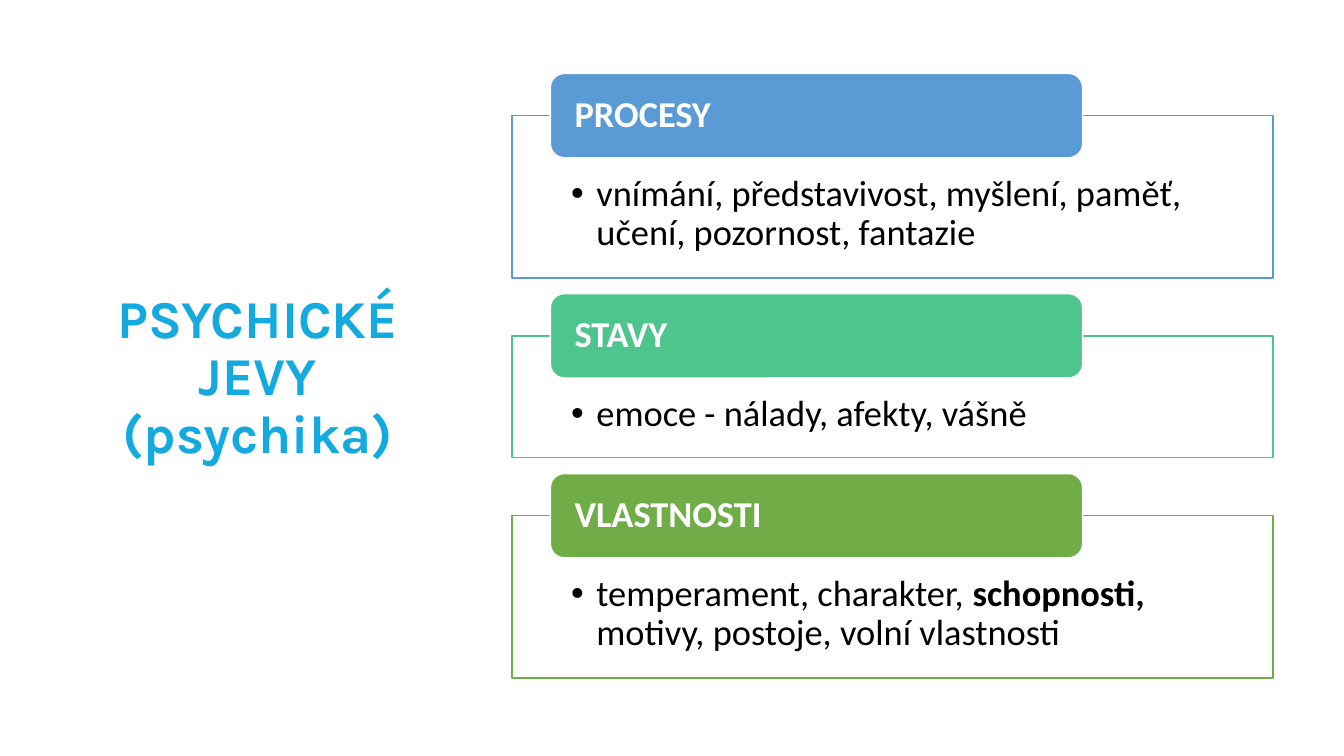
from lxml import etree
from pptx import Presentation
from pptx import util as u
from pptx.dml.color import RGBColor
from pptx.enum import shapes, text
from pptx.oxml import ns

WHITE = RGBColor(0xFF, 0xFF, 0xFF)
BLACK = RGBColor(0x00, 0x00, 0x00)
CYAN = RGBColor(0x14, 0xAA, 0xE0)
BLUE = RGBColor(0x5B, 0x9B, 0xD5)
MINT = RGBColor(0x4D, 0xC5, 0x8D)
GREEN = RGBColor(0x70, 0xAD, 0x47)

SECTIONS = [
    ("PROCESY", BLUE, 115.9,
     [("vnímání, představivost, myšlení, paměť, učení, pozornost, fantazie", False)]),
    ("STAVY", MINT, 87.1,
     [("emoce - nálady, afekty, vášně", False)]),
    ("VLASTNOSTI", GREEN, 115.9,
     [("temperament, charakter, ", False),
      ("schopnosti, ", True),
      ("motivy, postoje, volní vlastnosti", False)]),
]


class SlideBuilder:
    title_font = "Karla"
    body_font = "Calibri"
    body_size = 26
    line_spacing = 0.9

    def __init__(self, presentation):
        self.slide = presentation.slides.add_slide(presentation.slide_layouts[5])

    def format_run(self, run, font, size, color, bold):
        run.font.name = font
        run.font.size = u.Pt(size)
        run.font.color.rgb = color
        run.font.bold = bold

    def title(self, wording, left, top, width, height):
        shape = self.slide.shapes.title
        shape.left, shape.top = u.Pt(left), u.Pt(top)
        shape.width, shape.height = u.Pt(width), u.Pt(height)
        frame = shape.text_frame
        frame.text = wording
        frame.word_wrap = True
        frame.auto_size = text.MSO_AUTO_SIZE.NONE
        frame.vertical_anchor = text.MSO_ANCHOR.MIDDLE
        paragraph = frame.paragraphs[0]
        paragraph.alignment = text.PP_ALIGN.CENTER
        paragraph.line_spacing = self.line_spacing
        self.format_run(paragraph.runs[0], self.title_font, 38, CYAN, True)

    def box(self, kind, left, top, width, height, fill, line, margins, anchor):
        shape = self.slide.shapes.add_shape(
            kind, u.Pt(left), u.Pt(top), u.Pt(width), u.Pt(height))
        shape.shadow.inherit = False
        shape.fill.solid()
        shape.fill.fore_color.rgb = fill
        shape.line.color.rgb = line
        shape.line.width = u.Pt(1)
        frame = shape.text_frame
        frame.word_wrap = True
        frame.vertical_anchor = anchor
        side, above, below = margins
        frame.margin_left = frame.margin_right = u.Pt(side)
        frame.margin_top, frame.margin_bottom = u.Pt(above), u.Pt(below)
        paragraph = frame.paragraphs[0]
        paragraph.alignment = text.PP_ALIGN.LEFT
        paragraph.line_spacing = self.line_spacing
        return paragraph

    def header(self, wording, left, top, width, height, color):
        paragraph = self.box(
            shapes.MSO_SHAPE.ROUNDED_RECTANGLE, left, top, width, height,
            color, WHITE, (14.4, 0, 0), text.MSO_ANCHOR.MIDDLE)
        paragraph.text = wording
        self.format_run(paragraph.runs[0], self.body_font, self.body_size, WHITE, True)

    def bullet_panel(self, parts, left, top, width, height, color):
        paragraph = self.box(
            shapes.MSO_SHAPE.RECTANGLE, left, top, width, height,
            WHITE, color, (42.2, 42.5, 14.4), text.MSO_ANCHOR.TOP)
        properties = paragraph._p.get_or_add_pPr()
        properties.set("marL", str(u.Pt(18)))
        properties.set("indent", str(u.Pt(-18)))
        etree.SubElement(properties, ns.qn("a:buFont"), typeface="Arial")
        etree.SubElement(properties, ns.qn("a:buChar"), char="•")
        for wording, bold in parts:
            run = paragraph.add_run()
            run.text = wording
            self.format_run(run, self.body_font, self.body_size, BLACK, bold)


def main():
    presentation = Presentation()
    presentation.slide_width = u.Pt(960)
    presentation.slide_height = u.Pt(540)
    builder = SlideBuilder(presentation)
    builder.title("PSYCHICKÉ JEVY (psychika)", 49.7, 50.4, 269.3, 439.9)

    header_height, gap = 60.2, 11.3
    top = 52.5
    for heading, color, panel_height, parts in SECTIONS:
        panel_top = top + header_height / 2
        builder.bullet_panel(parts, 365.8, panel_top, 543.6, panel_height, color)
        builder.header(heading, 393.1, top, 380.2, header_height, color)
        top = panel_top + panel_height + gap

    presentation.save("out.pptx")


if __name__ == "__main__":
    main()
